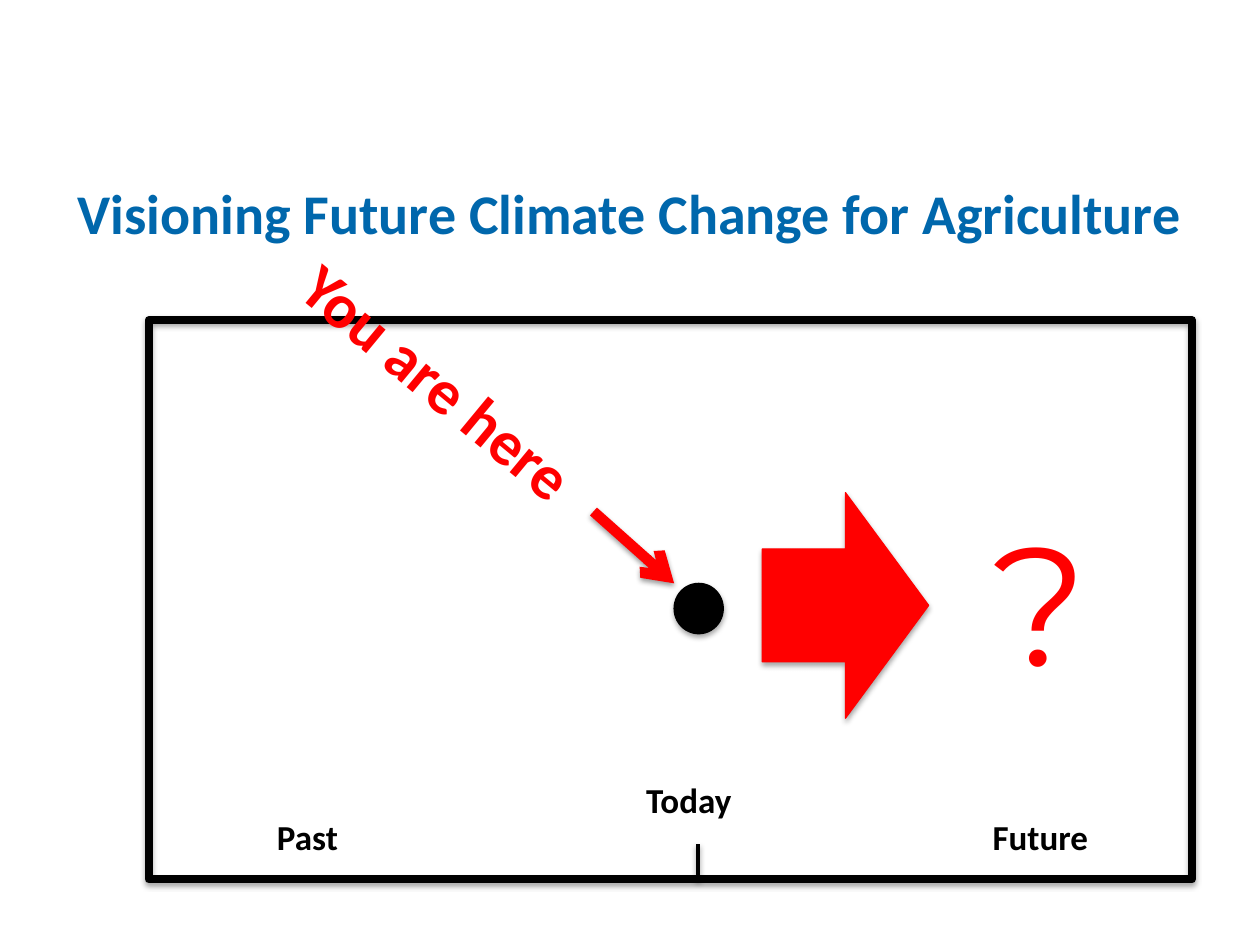
"""Build the slide on visioning future climate change for agriculture."""
from dataclasses import dataclass

from lxml.etree import SubElement
from pptx import Presentation
from pptx.dml.color import RGBColor
from pptx.enum.shapes import MSO_CONNECTOR, MSO_SHAPE
from pptx.enum.text import MSO_AUTO_SIZE, PP_ALIGN
from pptx.oxml import parse_xml
from pptx.oxml.ns import nsdecls, qn
from pptx.util import Inches, Pt


@dataclass(frozen=True)
class Theme:
    black: RGBColor = RGBColor(0, 0, 0)
    red: RGBColor = RGBColor(255, 0, 0)
    blue: RGBColor = RGBColor(0, 103, 172)
    body_font: str = "Calibri"
    mark_font: str = "Montserrat"
    label: int = 20
    title: int = 32
    callout: int = 36
    mark: int = 96


theme = Theme()
deck = Presentation()
deck.slide_width, deck.slide_height = Inches(10), Inches(7.5)
page = deck.slides.add_slide(deck.slide_layouts[6])


def place(*shares):
    """Turn alternating x and y percentages of the slide into lengths."""
    sides = (deck.slide_width, deck.slide_height) * 2
    return [round(side * share / 100) for side, share in zip(sides, shares)]


def cast_shadow(item, opacity, distance):
    """Give a shape or connector a soft shadow straight below it."""
    item._element.spPr.append(parse_xml(
        f'<a:effectLst {nsdecls("a")}><a:outerShdw blurRad="{Pt(3.1)}" dist="{Pt(distance)}" '
        f'dir="5400000" rotWithShape="0"><a:srgbClr val="{theme.black}">'
        f'<a:alpha val="{opacity * 1000}"/></a:srgbClr></a:outerShdw></a:effectLst>'))


shapes = [
    (MSO_SHAPE.RECTANGLE, (11.8, 33.87, 82.8, 59.2), None, theme.black, 4.5),
    (MSO_SHAPE.OVAL, (53.5, 61.73, 3.9, 5.33), theme.black, theme.black, 0.75),
    (MSO_SHAPE.RIGHT_ARROW, (60.5, 52.13, 13.2, 23.87), theme.red, theme.red, 0.75),
]
for kind, area, fill, outline, weight in shapes:
    shape = page.shapes.add_shape(kind, *place(*area))
    if fill is None:
        shape.fill.background()
    else:
        shape.fill.solid()
        shape.fill.fore_color.rgb = fill
    shape.line.color.rgb = outline
    shape.line.width = Pt(weight)
    cast_shadow(shape, 35, 1.8)

lines = [
    ((55.4, 89.33, 55.4, 93.2), theme.black, 2, False),
    ((47.1, 54.13, 53.5, 61.73), theme.red, 6, True),
]
for ends, color, weight, pointed in lines:
    line = page.shapes.add_connector(MSO_CONNECTOR.STRAIGHT, *place(*ends))
    line.line.color.rgb = color
    line.line.width = Pt(weight)
    if pointed:
        SubElement(line.line._get_or_add_ln(), qn("a:tailEnd"), type="arrow")
    cast_shadow(line, 38, 1.6)

left, center = PP_ALIGN.LEFT, PP_ALIGN.CENTER
texts = [
    ("Today", (50.3, 81.73, 10.2, 5.87), theme.label, theme.black, True, left, 0),
    ("Past", (21, 85.6, 7, 5.87), theme.label, theme.black, True, left, 0),
    ("Future", (77.8, 85.6, 12.2, 5.87), theme.label, theme.black, True, left, 0),
    ("?", (77.8, 52.13, 10.2, 22.93), theme.mark, theme.red, False, left, 0),
    ("You are here", (20.7, 36, 28.8, 9.47), theme.callout, theme.red, False, left, 39.7),
    ("Visioning Future Climate Change for Agriculture", (0, 18.27, 100, 8.53),
     theme.title, theme.blue, True, center, 0),
]
for wording, area, size, color, wraps, alignment, angle in texts:
    box = page.shapes.add_textbox(*place(*area))
    box.rotation = angle
    box.text_frame.word_wrap = wraps
    box.text_frame.auto_size = MSO_AUTO_SIZE.SHAPE_TO_FIT_TEXT
    para = box.text_frame.paragraphs[0]
    para.text = wording
    para.alignment = alignment
    para.font.name = theme.mark_font if size == theme.mark else theme.body_font
    para.font.size = Pt(size)
    para.font.bold = size != theme.mark
    para.font.color.rgb = color

deck.save("out.pptx")
